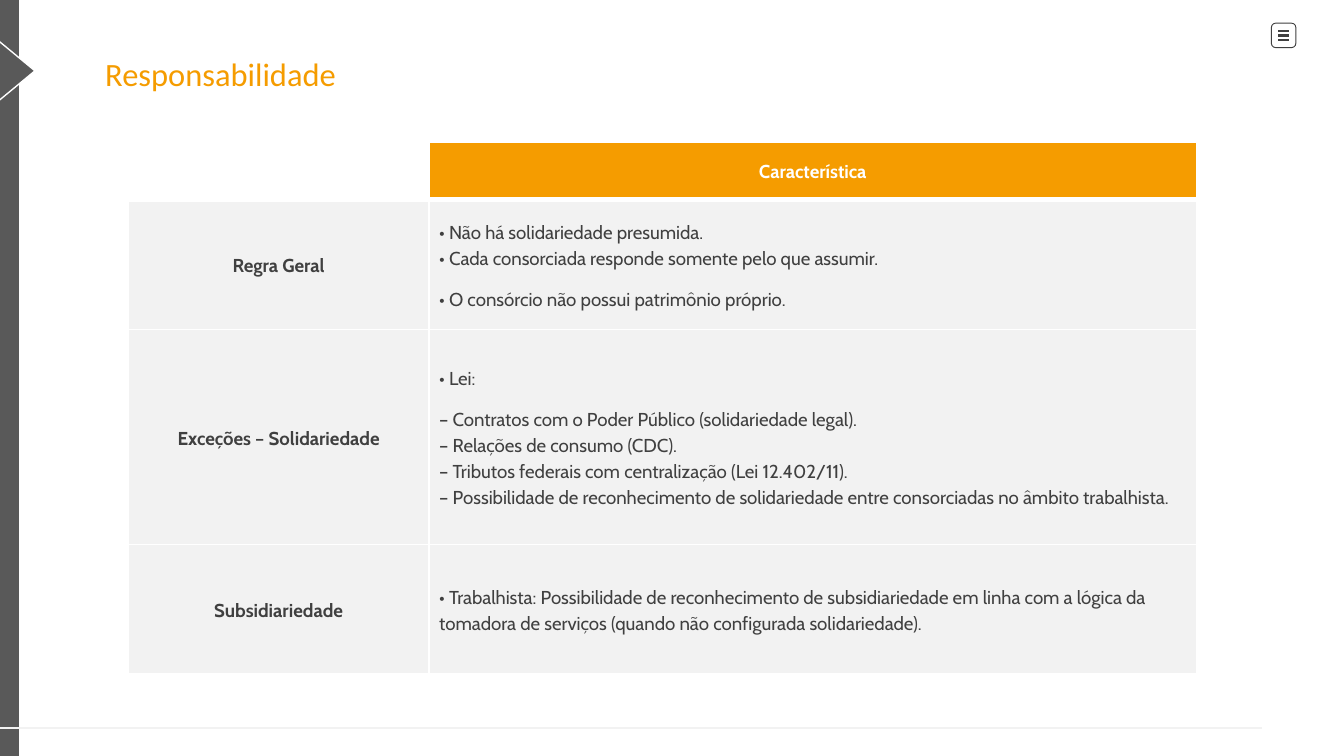
from lxml import etree
from pptx import Presentation
from pptx.dml.color import RGBColor
from pptx.enum.shapes import MSO_CONNECTOR, MSO_SHAPE
from pptx.enum.text import MSO_ANCHOR, PP_ALIGN
from pptx.oxml.ns import qn
from pptx.util import Cm, Pt

LINE = MSO_CONNECTOR.STRAIGHT
RECT, ROUND, TRI = MSO_SHAPE.RECTANGLE, MSO_SHAPE.ROUNDED_RECTANGLE, MSO_SHAPE.ISOSCELES_TRIANGLE
LEFT, CENTER = PP_ALIGN.LEFT, PP_ALIGN.CENTER
MIDDLE, TOP = MSO_ANCHOR.MIDDLE, MSO_ANCHOR.TOP

ORANGE, GRAY, DARK, PALE, WHITE = "F59C00", "595959", "404040", "F2F2F2", "FFFFFF"

COLS = [5.69, 14.5]
HEIGHTS = [1.09, 2.46, 4.06, 2.44]
# \v is a line break inside a paragraph, \n starts a new paragraph
ROWS = [
    ("", "Característica"),
    ("Regra Geral",
     "• Não há solidariedade presumida.\v"
     "• Cada consorciada responde somente pelo que assumir.\n"
     "• O consórcio não possui patrimônio próprio."),
    ("Exceções – Solidariedade",
     "• Lei:\n"
     "– Contratos com o Poder Público (solidariedade legal).\v"
     "– Relações de consumo (CDC).\v"
     "– Tributos federais com centralização (Lei 12.402/11).\v"
     "– Possibilidade de reconhecimento de solidariedade entre "
     "consorciadas no âmbito trabalhista."),
    ("Subsidiariedade",
     "• Trabalhista: Possibilidade de reconhecimento de subsidiariedade em linha "
     "com a lógica da tomadora de serviços (quando não configurada solidariedade)."),
]


def rgb(code):
    return RGBColor.from_string(code)


class Deck:
    body, head = "Cabin", "Calibri"

    def __init__(self, slide):
        self.slide = slide

    def shape(self, kind, x, y, w, h, fill=None, line=None, width=0.75, home=None):
        box = (home or self.slide).shapes.add_shape(kind, Cm(x), Cm(y), Cm(w), Cm(h))
        box.shadow.inherit = False
        if fill:
            box.fill.solid()
            box.fill.fore_color.rgb = rgb(fill)
        else:
            box.fill.background()
        if line:
            box.line.color.rgb = rgb(line)
            box.line.width = Pt(width)
        else:
            box.line.fill.background()
        return box

    def rule(self, x1, x2, y, color, width, home=None):
        line = (home or self.slide).shapes.add_connector(LINE, Cm(x1), Cm(y), Cm(x2), Cm(y))
        line.line.color.rgb = rgb(color)
        line.line.width = Pt(width)
        etree.SubElement(line._element.spPr, qn("a:effectLst"))

    def title(self, text, x, y, w, h):
        frame = self.slide.shapes.add_textbox(Cm(x), Cm(y), Cm(w), Cm(h)).text_frame
        frame.word_wrap = True
        frame.vertical_anchor = TOP
        frame.margin_left = frame.margin_right = Cm(0.19)
        frame.margin_top = frame.margin_bottom = Cm(0.1)
        frame.text = text
        par = frame.paragraphs[0]
        par.line_spacing = 0.9
        run = par.runs[0]
        run.font.name, run.font.size = self.head, Pt(30)
        run.font.color.rgb = rgb(ORANGE)
        run._r.get_or_add_rPr().set("baseline", "30000")

    def cell(self, cell, text, fill, color, bold, align, base):
        self.edge(cell, base)
        cell.fill.solid()
        cell.fill.fore_color.rgb = rgb(fill)
        cell.vertical_anchor = MIDDLE
        cell.margin_left = cell.margin_right = Cm(0.19)
        cell.margin_top = cell.margin_bottom = 0
        cell.text_frame.text = text
        for par in cell.text_frame.paragraphs:
            par.alignment = align
            par.line_spacing = 1.15
            par.space_after = Pt(8)
            for run in par.runs:
                font = run.font
                font.name, font.size, font.bold = self.body, Pt(10), bold
                font.color.rgb = rgb(color)

    def edge(self, cell, base):
        """Draw white cell borders, 1 pt wide but for the bottom one."""
        props = cell._tc.get_or_add_tcPr()
        for side, width in zip("LRTB", (1, 1, 1, base)):
            line = etree.SubElement(props, qn("a:ln" + side), w=str(Pt(width)))
            fill = etree.SubElement(line, qn("a:solidFill"))
            etree.SubElement(fill, qn("a:srgbClr"), val=WHITE)

    def table(self, x, y):
        grid = self.slide.shapes.add_table(
            len(ROWS), len(COLS), Cm(x), Cm(y), Cm(sum(COLS)), Cm(sum(HEIGHTS))).table
        grid.first_row = grid.horz_banding = False
        for col, width in zip(grid.columns, COLS):
            col.width = Cm(width)
        for r, (texts, height) in enumerate(zip(ROWS, HEIGHTS)):
            grid.rows[r].height = Cm(height)
            for c, text in enumerate(texts):
                top = r == 0
                label = top or c == 0
                fill = (ORANGE if text else WHITE) if top else PALE
                self.cell(grid.cell(r, c), text, fill, WHITE if top else DARK,
                          label, CENTER if label else LEFT, 3 if top else 1)

    def menu(self, x, y, size):
        group = self.slide.shapes.add_group_shape()
        self.shape(ROUND, x, y, size, size, line=DARK, width=0.5, home=group)
        for i in (-1, 0, 1):
            self.rule(x + size - 0.13, x + 0.13, y + size / 2 + 0.09 * i, DARK, 1.25, group)


def main():
    prs = Presentation()
    prs.slide_width, prs.slide_height = Cm(25.4), Cm(14.29)
    deck = Deck(prs.slides.add_slide(prs.slide_layouts[6]))
    deck.shape(RECT, 0, 0, 0.36, 14.29, GRAY)
    deck.rule(23.85, 0, 13.76, PALE, 0.75)
    deck.menu(24.03, 0.44, 0.46)
    deck.table(2.42, 2.68)
    deck.title("Responsabilidade", 1.8, 0.94, 12.45, 1.04)
    deck.shape(TRI, -0.48, 0.91, 1.42, 0.86, GRAY, WHITE).rotation = 90
    prs.save("out.pptx")


if __name__ == "__main__":
    main()
